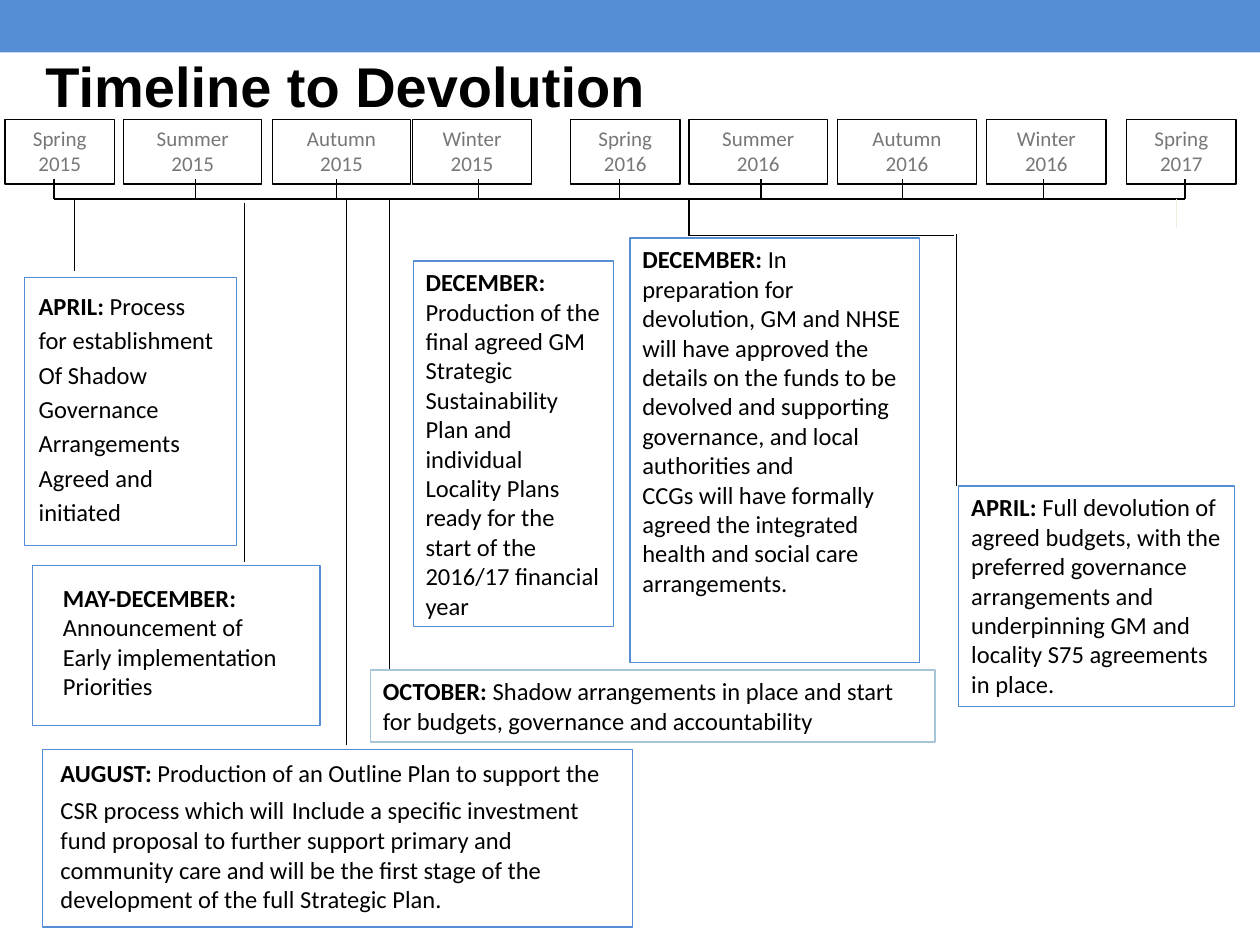
from dataclasses import dataclass

from lxml import etree
from pptx import Presentation
from pptx.dml.color import RGBColor
from pptx.enum.shapes import MSO_CONNECTOR, MSO_SHAPE
from pptx.enum.text import MSO_ANCHOR, PP_ALIGN
from pptx.oxml.ns import qn
from pptx.util import Cm, Pt

RECT = MSO_SHAPE.RECTANGLE
STRAIGHT = MSO_CONNECTOR.STRAIGHT
LEFT, CENTER = PP_ALIGN.LEFT, PP_ALIGN.CENTER
TOP, MIDDLE = MSO_ANCHOR.TOP, MSO_ANCHOR.MIDDLE

COLORS = {"black": "000000", "blue": "558ED5", "pale_blue": "A6C5D8",
          "grey": "777777", "cream": "EEECE1"}
FONT = "Calibri"
AXIS_Y, AXIS_X, TICK_STEP, TICK_TOP = 4.01, 1.09, 2.85, 3.61
SEASON_TOP, SEASON_HEIGHT = 2.41, 1.3
SEASON_WIDTHS = {"Spring": 2.21, "Summer": 2.79, "Autumn": 2.79, "Winter": 2.41}


@dataclass
class Box:
    left: float
    top: float
    width: float
    height: float


@dataclass
class Run:
    text: str
    bold: bool = False
    size: int = 14


@dataclass
class Panel:
    box: Box
    paragraphs: list[list[Run]]
    frame: Box | None = None
    line: str | None = None
    space_before: float = 0


@dataclass
class Line:
    x1: float
    y1: float
    x2: float
    y2: float
    color: str = "black"


SEASONS = [
    ("Spring", 2015, 0.1), ("Summer", 2015, 2.49), ("Autumn", 2015, 5.49),
    ("Winter", 2015, 8.31), ("Spring", 2016, 11.5), ("Summer", 2016, 13.89),
    ("Autumn", 2016, 16.89), ("Winter", 2016, 19.89), ("Spring", 2017, 22.71),
]

LEADERS = [
    Line(1.5, AXIS_Y, 1.5, 5.46),
    Line(23.72, AXIS_Y, 23.72, 4.6, "cream"),
    Line(7.85, 4.04, 7.85, 13.51),
    Line(6.99, 4.04, 6.99, 15.01),
    Line(13.89, 4.04, 13.89, 4.75),
    Line(19.28, 4.72, 19.28, 9.8),
    Line(19.23, 4.75, 13.87, 4.75),
    Line(4.93, 4.09, 4.93, 11.33),
]

PANELS = [
    Panel(Box(0.53, 5.74, 4.55, 5.05),
          [[Run("APRIL:", True), Run(" Process")]]
          + [[Run(t)] for t in ("for establishment", "Of Shadow", "Governance",
                                "Arrangements", "Agreed and", "initiated")],
          frame=Box(0.5, 5.59, 4.27, 5.41), space_before=2.8),
    Panel(Box(0.97, 15.16, 11.63, 3.43),
          [[Run("AUGUST:", True),
            Run(" Production of an Outline Plan to support the CSR process which will"),
            Run(" ", size=18),
            Run("Include a specific investment fund proposal to further support "
                "primary and community care and will be the first stage of the "
                "development of the full Strategic Plan.")]],
          frame=Box(0.86, 15.11, 11.89, 3.58)),
    Panel(Box(8.33, 5.26, 4.04, 7.37),
          [[Run("DECEMBER:", True),
            Run(" Production of the final agreed GM Strategic Sustainability Plan "
                "and individual Locality Plans ready for the start of the 2016/17 "
                "financial year")]], line="blue"),
    Panel(Box(12.7, 4.8, 5.84, 8.56),
          [[Run("DECEMBER:", True),
            Run(" In preparation for devolution, GM and NHSE will have approved the "
                "details on the funds to be devolved and supporting governance, and "
                "local authorities and")],
           [Run("CCGs will have formally agreed the integrated health and social "
                "care arrangements.")]], line="blue"),
    Panel(Box(19.33, 9.8, 5.56, 4.45),
          [[Run("APRIL:", True),
            Run(" Full devolution of agreed budgets, with the preferred governance "
                "arrangements and underpinning GM and locality S75 agreements in "
                "place.")]], line="blue"),
    Panel(Box(1.02, 11.63, 5.33, 2.62),
          [[Run("MAY-DECEMBER:", True)], [Run("Announcement of")],
           [Run("Early implementation Priorities")]],
          frame=Box(0.66, 11.4, 5.79, 3.23)),
    Panel(Box(7.47, 13.51, 11.38, 1.45),
          [[Run("OCTOBER: ", True),
            Run("Shadow arrangements in place and start for budgets, governance "
                "and accountability")]], line="pale_blue"),
]


def rgb(name: str) -> RGBColor:
    return RGBColor.from_string(COLORS[name])


def lengths(box: Box) -> list[Cm]:
    return [Cm(v) for v in (box.left, box.top, box.width, box.height)]


def add_rect(s, box: Box, line: str | None = None, fill: str | None = None):
    sp = s.shapes.add_shape(RECT, *lengths(box))
    sp.shadow.inherit = False
    if fill:
        sp.fill.solid()
        sp.fill.fore_color.rgb = rgb(fill)
    else:
        sp.fill.background()
    if line:
        sp.line.color.rgb = rgb(line)
        sp.line.width = Pt(0.75)
    else:
        sp.line.fill.background()
    return sp


def add_line(s, line: Line) -> None:
    c = s.shapes.add_connector(STRAIGHT, Cm(line.x1), Cm(line.y1),
                               Cm(line.x2), Cm(line.y2))
    c.line.color.rgb = rgb(line.color)
    c.line.width = Pt(0.75)
    etree.SubElement(c._element.spPr, qn("a:effectLst"))


def style(r, size: int, color: str, bold: bool = False, font: str = FONT) -> None:
    r.font.name, r.font.size, r.font.bold = font, Pt(size), bold
    r.font.color.rgb = rgb(color)


def add_season(s, season: str, year: int, left: float) -> None:
    box = Box(left, SEASON_TOP, SEASON_WIDTHS[season], SEASON_HEIGHT)
    tf = add_rect(s, box, "black").text_frame
    tf.text = f"{season} {year}"
    tf.vertical_anchor = TOP
    p = tf.paragraphs[0]
    p.alignment = CENTER
    style(p.runs[0], 12, "grey")


def add_panel(s, panel: Panel) -> None:
    if panel.frame:
        add_rect(s, panel.frame, "blue")
    if panel.line:
        sp = add_rect(s, panel.box, panel.line)
    else:
        sp = s.shapes.add_textbox(*lengths(panel.box))
    tf = sp.text_frame
    tf.word_wrap = True
    tf.vertical_anchor = TOP
    for i, runs in enumerate(panel.paragraphs):
        p = tf.add_paragraph() if i else tf.paragraphs[0]
        p.alignment = LEFT
        if i and panel.space_before:
            p.space_before = Pt(panel.space_before)
        for run in runs:
            r = p.add_run()
            r.text = run.text
            style(r, run.size, "black", run.bold)


def add_title(s, text: str) -> None:
    title = s.shapes.title
    title.left, title.top, title.width, title.height = lengths(Box(0.66, 0.91, 24.26, 1.63))
    tf = title.text_frame
    tf.text = text
    tf.vertical_anchor = MIDDLE
    p = tf.paragraphs[0]
    p.alignment = LEFT
    style(p.runs[0], 32, "black", True, "Arial")


def main() -> None:
    prs = Presentation()
    prs.slide_width, prs.slide_height = Cm(25.4), Cm(19.05)
    s = prs.slides.add_slide(prs.slide_layouts[5])
    add_rect(s, Box(0, -0.03, 25.4, 1.09), fill="blue")
    add_title(s, "Timeline to Devolution")
    ticks = [AXIS_X + i * TICK_STEP for i in range(len(SEASONS))]
    add_line(s, Line(ticks[0], AXIS_Y, ticks[-1], AXIS_Y))
    for x, season in zip(ticks, SEASONS):
        add_line(s, Line(x, AXIS_Y, x, TICK_TOP))
        add_season(s, *season)
    for leader in LEADERS:
        add_line(s, leader)
    for panel in PANELS:
        add_panel(s, panel)
    prs.save("out.pptx")


if __name__ == "__main__":
    main()
